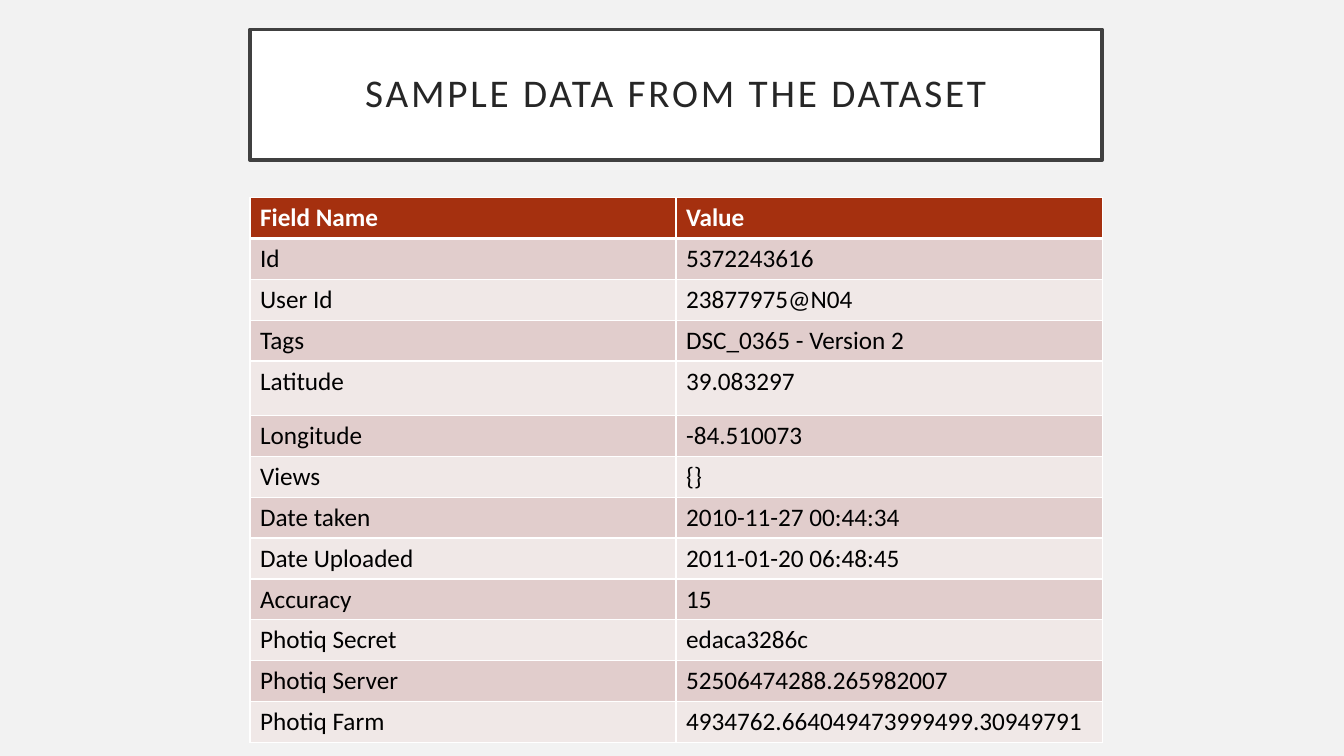
from dataclasses import dataclass

from lxml.etree import SubElement
from pptx import Presentation
from pptx.dml.color import RGBColor
from pptx.enum.shapes import MSO_SHAPE as Preset
from pptx.enum.text import MSO_ANCHOR as Anchor, PP_ALIGN as Align
from pptx.oxml.ns import qn
from pptx.slide import Slide
from pptx.table import _Cell as Cell
from pptx.text.text import _Paragraph as Paragraph
from pptx.util import Inches, Pt

SLIDE_WIDTH = Inches(13.33)
SLIDE_HEIGHT = Inches(7.5)
FONT = "Calibri"

PAGE = RGBColor(0xF2, 0xF2, 0xF2)
WHITE = RGBColor(0xFF, 0xFF, 0xFF)
BLACK = RGBColor(0x00, 0x00, 0x00)
TITLE_INK = RGBColor(0x26, 0x26, 0x26)
TITLE_FRAME = RGBColor(0x40, 0x40, 0x40)
HEADER_RED = RGBColor(0xA5, 0x30, 0x0F)
BANDS = (RGBColor(0xF0, 0xE8, 0xE7), RGBColor(0xE1, 0xCD, 0xCC))

ROW_SHARE = 5.4
TALL_ROW_SHARE = 7.2
THIN_RULE = 1
HEADER_RULE = 3


@dataclass(frozen=True)
class Area:
    left: float
    top: float
    width: float
    height: float

    def box(self) -> tuple[int, int, int, int]:
        return (across(self.left), down(self.top), across(self.width), down(self.height))


@dataclass(frozen=True)
class Field:
    name: str
    value: str
    share: float = ROW_SHARE


TITLE_AREA = Area(18.6, 3.87, 63.4, 17.33)
TABLE_AREA = Area(18.6, 26.13, 63.4, 72)

FIELDS = (
    Field("Field Name", "Value"),
    Field("Id", "5372243616"),
    Field("User Id", "23877975@N04"),
    Field("Tags", "DSC_0365 - Version 2"),
    Field("Latitude", "39.083297", TALL_ROW_SHARE),
    Field("Longitude", "-84.510073"),
    Field("Views", "{}"),
    Field("Date taken", "2010-11-27 00:44:34"),
    Field("Date Uploaded", "2011-01-20 06:48:45"),
    Field("Accuracy", "15"),
    Field("Photiq Secret", "edaca3286c"),
    Field("Photiq Server", "52506474288.265982007"),
    Field("Photiq Farm", "4934762.664049473999499.30949791"),
)


def across(percent: float) -> int:
    return round(SLIDE_WIDTH * percent / 100)


def down(percent: float) -> int:
    return round(SLIDE_HEIGHT * percent / 100)


def format_runs(paragraph: Paragraph, size: float, color: RGBColor, bold: bool = False) -> None:
    for run in paragraph.runs:
        run.font.name = FONT
        run.font.size = Pt(size)
        run.font.bold = bold
        run.font.color.rgb = color


def add_title(slide: Slide, wording: str) -> None:
    title = slide.shapes.add_shape(Preset.RECTANGLE, *TITLE_AREA.box())
    title.shadow.inherit = False
    title.fill.solid()
    title.fill.fore_color.rgb = WHITE
    title.line.color.rgb = TITLE_FRAME
    title.line.width = Pt(2.5)
    frame = title.text_frame
    frame.text = wording
    frame.word_wrap = True
    frame.vertical_anchor = Anchor.MIDDLE
    frame.margin_left = frame.margin_right = Inches(0.2)
    frame.margin_top = frame.margin_bottom = Inches(0.2)
    heading = frame.paragraphs[0]
    heading.alignment = Align.CENTER
    heading.line_spacing = 0.9
    format_runs(heading, 28, TITLE_INK)
    heading.runs[0].font._element.set("spc", "200")


def rule_cell(cell: Cell, top: float, bottom: float) -> None:
    properties = cell._tc.get_or_add_tcPr()
    widths = {"lnL": THIN_RULE, "lnR": THIN_RULE, "lnT": top, "lnB": bottom}
    for position, (side, width) in enumerate(widths.items()):
        rule = SubElement(properties, qn(f"a:{side}"), w=str(Pt(width)))
        paint = SubElement(rule, qn("a:solidFill"))
        SubElement(paint, qn("a:srgbClr"), val=str(WHITE))
        properties.insert(position, rule)


def add_fields(slide: Slide, fields: tuple[Field, ...]) -> None:
    table = slide.shapes.add_table(len(fields), 2, *TABLE_AREA.box()).table
    for column in table.columns:
        column.width = across(TABLE_AREA.width / 2)
    for index, field in enumerate(fields):
        is_header = index == 0
        table.rows[index].height = down(field.share)
        for cell, wording in zip(table.rows[index].cells, (field.name, field.value)):
            cell.text_frame.text = wording
            format_runs(cell.text_frame.paragraphs[0], 18, WHITE if is_header else BLACK, is_header)
            cell.fill.solid()
            cell.fill.fore_color.rgb = HEADER_RED if is_header else BANDS[index % 2]
            rule_cell(
                cell,
                top=HEADER_RULE if index == 1 else THIN_RULE,
                bottom=HEADER_RULE if is_header else THIN_RULE,
            )


def main() -> None:
    deck = Presentation()
    deck.slide_width = SLIDE_WIDTH
    deck.slide_height = SLIDE_HEIGHT
    slide = deck.slides.add_slide(deck.slide_layouts[6])
    slide.background.fill.solid()
    slide.background.fill.fore_color.rgb = PAGE
    add_fields(slide, FIELDS)
    add_title(slide, "SAMPLE DATA FROM THE DATASET")
    deck.save("out.pptx")


if __name__ == "__main__":
    main()
